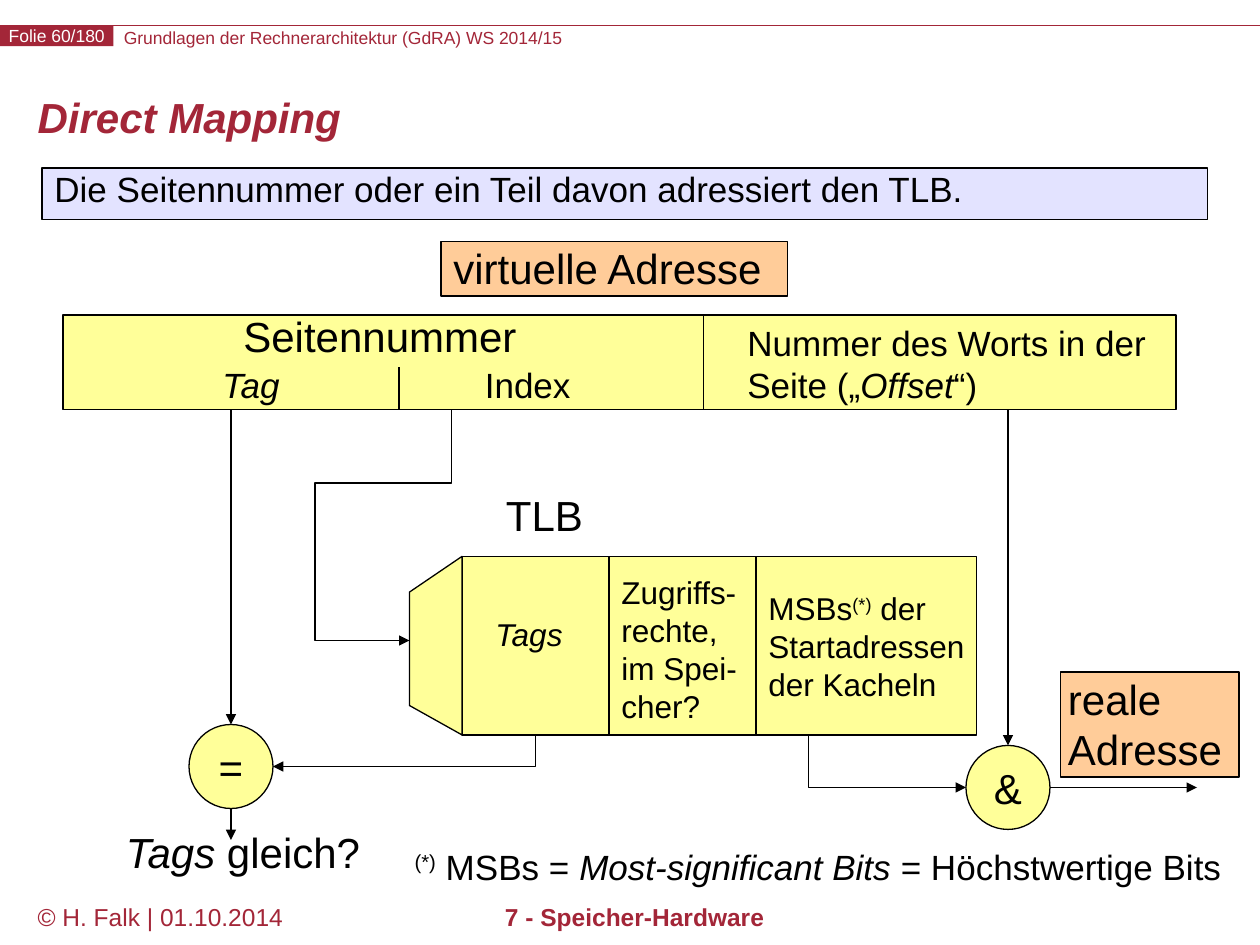
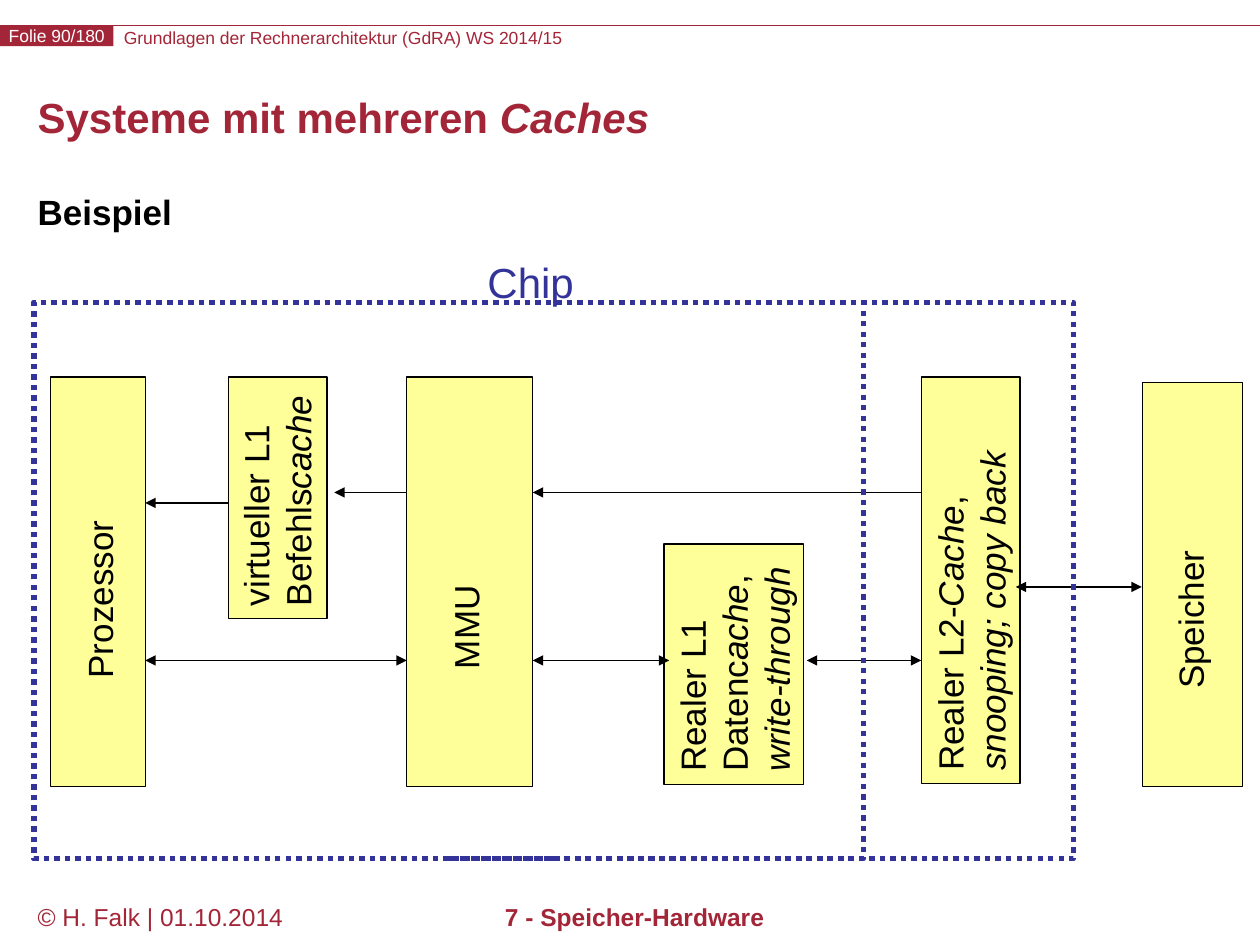
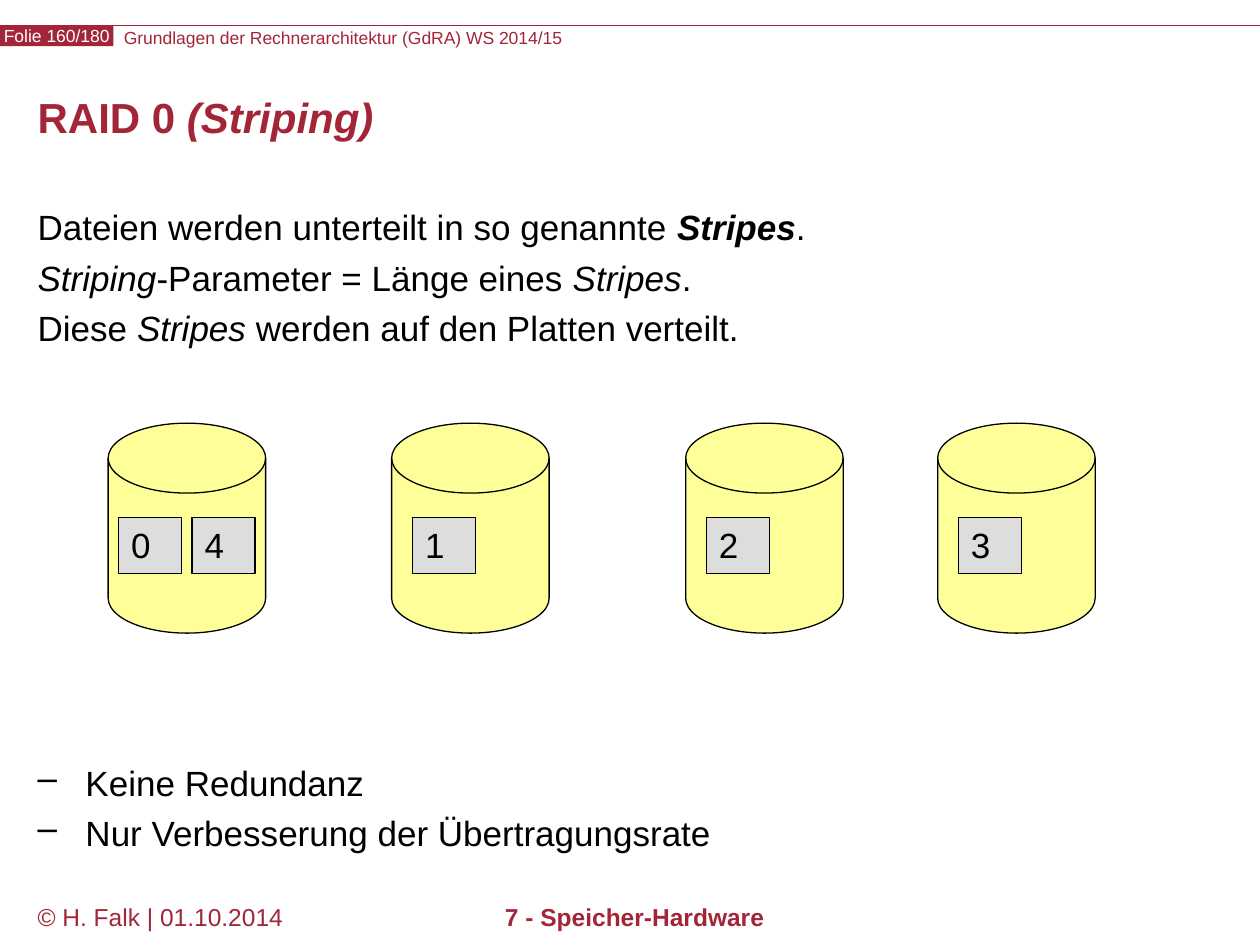
from dataclasses import dataclass

from lxml import etree
from pptx import Presentation
from pptx import util as u
from pptx.dml.color import RGBColor
from pptx.enum import dml, shapes, text
from pptx.oxml.ns import qn

COLUMNS, ROWS = 120, 90
WIDTH, HEIGHT = u.Inches(10), u.Inches(7.5)
COLORS = {
    "brand": "A32638",
    "ink": "000000",
    "paper": "FFFFFF",
    "part": "FFFF99",
    "address": "FFCC99",
    "statement": "E3E3FF",
    "block": "DDDDDD",
    "chip": "333399",
}
KINDS = shapes.MSO_SHAPE
CENTER = text.PP_ALIGN.CENTER
MIDDLE = text.MSO_ANCHOR.MIDDLE


@dataclass
class Box:
    x: float
    y: float
    w: float
    h: float

    def sub(self, x, y, w, h):
        return Box(self.x + x, self.y + y, w, h)

    def point(self, x, y):
        return (round((self.x + x) * WIDTH / COLUMNS),
                round((self.y + y) * HEIGHT / ROWS))

    def turned(self):
        shift = (self.w - self.h) / 2
        return Box(self.x + shift, self.y - shift, self.h, self.w)

    def emu(self):
        return (*self.point(0, 0), round(self.w * WIDTH / COLUMNS),
                round(self.h * HEIGHT / ROWS))


CANVAS = Box(0, 0, COLUMNS, ROWS)


def color(name):
    return RGBColor.from_string(COLORS[name])


def write(shape, *paragraphs, size=20, ink="ink", bold=False, italic=False,
          align=None, anchor=text.MSO_ANCHOR.TOP, inset=(0.1, 0.05), wrap=True,
          spacing=None, bullet=None):
    frame = shape.text_frame
    frame.word_wrap = wrap
    frame.vertical_anchor = anchor
    frame.margin_left = frame.margin_right = u.Inches(inset[0])
    frame.margin_top = frame.margin_bottom = u.Inches(inset[1])
    for number, runs in enumerate(paragraphs):
        paragraph = frame.add_paragraph() if number else frame.paragraphs[0]
        if bullet:
            properties = paragraph._p.get_or_add_pPr()
            properties.set("marL", str(u.Inches(0.38)))
            properties.set("indent", str(u.Inches(-0.38)))
            etree.SubElement(properties, qn("a:buChar")).set("char", bullet)
        paragraph.alignment = align or text.PP_ALIGN.LEFT
        if spacing:
            paragraph.line_spacing = spacing
        for run in [runs] if isinstance(runs, str) else runs:
            words, style = (run, "") if isinstance(run, str) else run
            for index, line in enumerate(words.split("\n")):
                if index:
                    paragraph.add_line_break()
                piece = paragraph.add_run()
                piece.text = line
                font = piece.font
                font.name, font.size = "Arial", u.Pt(size)
                font.bold = bold or "b" in style
                font.italic = italic or "i" in style
                font.color.rgb = color(ink)
                if "^" in style:
                    font.element.set("baseline", "30000") if hasattr(
                        font, "element") else font._rPr.set("baseline", "30000")


def label(slide, box, *paragraphs, turn=False, **style):
    area = slide.shapes.add_textbox(*(box.turned() if turn else box).emu())
    if turn:
        area.rotation = 270
    write(area, *paragraphs, **style)


def paint(shape, fill=None, line="ink", weight=0.75):
    shape.shadow.inherit = False
    if fill:
        shape.fill.solid()
        shape.fill.fore_color.rgb = color(fill)
    else:
        shape.fill.background()
    if line:
        shape.line.color.rgb = color(line)
        shape.line.width = u.Pt(weight)
    else:
        shape.line.fill.background()


def block(slide, box, *paragraphs, kind=KINDS.RECTANGLE, fill="part", line="ink",
          weight=0.75, turn=False, **style):
    shape = slide.shapes.add_shape(kind, *(box.turned() if turn else box).emu())
    if turn:
        shape.rotation = 270
    paint(shape, fill, line, weight)
    if paragraphs:
        write(shape, *paragraphs, **style)
    return shape


def add_heads(shape, ends):
    outline = shape.element.spPr.find(qn("a:ln"))
    for end in ends:
        etree.SubElement(outline, qn(f"a:{end}End")).set("type", "triangle")


def connect(slide, box, start, finish, ends=(), ink="ink", target=None):
    connector = slide.shapes.add_connector(
        shapes.MSO_CONNECTOR.STRAIGHT, *box.point(*start), *box.point(*finish))
    if target is not None:
        connector.end_connect(target, 0)
    connector.line.color.rgb = color(ink)
    connector.line.width = u.Pt(0.75)
    add_heads(connector, ends)
    etree.SubElement(connector.element.spPr, qn("a:effectLst"))


def outline(slide, box, points, closed=False, fill=None, ends=()):
    corners = [box.point(*point) for point in points]
    builder = slide.shapes.build_freeform(*corners[0])
    builder.add_line_segments(corners[1:], close=closed)
    shape = builder.convert_to_shape()
    paint(shape, fill)
    add_heads(shape, ends)


def slide_frame(deck, number, *title):
    slide = deck.slides.add_slide(deck.slide_layouts[6])
    connect(slide, CANVAS, (0, 2.4), (COLUMNS, 2.4), ink="brand")
    label(slide, CANVAS.sub(11.8, 2.6, 79, 2),
          "Grundlagen der Rechnerarchitektur (GdRA) WS 2014/15",
          size=10, ink="brand", inset=(0, 0))
    block(slide, CANVAS.sub(0, 2.4, 10.8, 2), f"Folie {number}/180", fill="brand",
          line=None, size=10, ink="paper", align=CENTER, inset=(0, 0), wrap=False)
    label(slide, CANVAS.sub(2.4, 85.3, 26.4, 4.7), "© H. Falk | 01.10.2014",
          size=14, ink="brand")
    label(slide, CANVAS.sub(24.1, 85.3, 72.7, 4.7), "7 - Speicher-Hardware",
          size=14, ink="brand", bold=True, align=CENTER)
    label(slide, CANVAS.sub(2.4, 7.2, 115.3, 8.6), title, size=24, ink="brand",
          bold=True, anchor=MIDDLE, spacing=u.Pt(24))
    return slide


def virtual_address(slide, box):
    block(slide, box)
    label(slide, box.sub(16, -1, 31, 6), "Seitennummer", size=24)
    label(slide, box.sub(64, 0, 41, 9),
          ["Nummer des Worts in der Seite („", ("Offset", "i"), "“)"])
    label(slide, box.sub(14, 4, 10, 5), "Tag", italic=True)
    label(slide, box.sub(39, 4, 19, 5), "Index")
    for column, top in ((61, 0), (32, 5)):
        connect(slide, box, (column, top), (column, box.h))
    block(slide, box.sub(47 - 11, -7, 33, 5.2), "virtuelle Adresse",
          fill="address", size=24, inset=(0.1, 0.01))


def tlb(slide, box):
    block(slide, box.sub(5, 0, box.w - 5, box.h))
    outline(slide, box, [(5, 0), (0, 3.4), (0, 14.2), (5, box.h)],
            closed=True, fill="part")
    for column in (19, 33):
        connect(slide, box, (column, 0), (column, box.h))
    label(slide, box.sub(8, -7, 27, 6), "TLB", size=24)
    label(slide, box.sub(7, 5, 10, 5), "Tags", size=18, italic=True)
    label(slide, box.sub(19, 1, 16, 16), "Zugriffs-rechte,\nim Spei-cher?", size=18)
    label(slide, box.sub(33, 2.5, 22, 12),
          ["MSBs", ("(*)", "^"), " der Startadressen der Kacheln"], size=18)


def address_paths(slide, box):
    for sign, column, row in (("=", 18, 69), ("&", 92, 71)):
        gate = block(slide, box.sub(column, row, 8, 8), sign, kind=KINDS.OVAL,
                     size=24, align=CENTER, anchor=MIDDLE, inset=(0, 0))
        connect(slide, box, (column + 4, 39), (column + 4, row), ["tail"], target=gate)
    connect(slide, box, (22, 77), (22, 80), ["tail"])
    connect(slide, box, (100, 75), (114, 75), ["tail"])
    for route in ([(43, 39), (43, 46), (30, 46), (30, 61), (39, 61)],
                  [(51, 70), (51, 73), (26, 73)],
                  [(77, 70), (77, 75), (92, 75)]):
        outline(slide, box, route, ends=["tail"])
    block(slide, box.sub(101, 64, 17, 10), "reale Adresse", fill="address",
          size=24, inset=(0.06, 0.01))
    label(slide, box.sub(10.8, 78.1, 27, 6), [("Tags", "i"), " gleich?"], size=24)
    label(slide, box.sub(38.3, 79.9, 81.2, 5.3),
          [("(*)", "^"), " MSBs = ", ("Most-significant Bits", "i"),
           " = Höchstwertige Bits"])


def direct_mapping(deck):
    slide = slide_frame(deck, 60, ("Direct Mapping", "i"))
    block(slide, CANVAS.sub(4, 16, 111, 4.9),
          "Die Seitennummer oder ein Teil davon adressiert den TLB.",
          fill="statement", spacing=u.Pt(20))
    virtual_address(slide, CANVAS.sub(6, 30, 106, 9))
    tlb(slide, CANVAS.sub(39, 53, 54, 17))
    address_paths(slide, CANVAS)


def chip(slide, box):
    top = 7.1
    for unit, column, row, width, height, label_column, label_row in (
            ("Prozessor", 1.6, top, 9, 39, 3.6, 17),
            ("MMU", 35.5, top, 12, 39, 38.5, 16.1),
            ("Speicher", 105.6, 7.6, 9.5, 38.5, 107.5, 18)):
        block(slide, box.sub(column, row, width, height))
        label(slide, box.sub(label_column, label_row, 5.2, 20), unit, turn=True)

    block(slide, box.sub(18.5, top, 9.4, 23),
          ["virtueller L1 Befehls", ("cache", "i")], turn=True)
    block(slide, box.sub(60, 23, 13.3, 22.9),
          ["Realer L1 Datenc", ("ache", "i"), ", ", ("write-through", "i")],
          turn=True, anchor=MIDDLE)
    block(slide, box.sub(84.5, top, 9.4, 38.7),
          ["Realer L2-", ("Cache", "i"), ", ", ("snooping; copy back", "i")],
          turn=True, anchor=MIDDLE)

    one_way, both_ways = ["tail"], ["head", "tail"]
    for row, start, finish, ends in (
            (19.1, 18.5, 10.6, one_way),
            (18.1, 84.5, 47.5, one_way),
            (18.1, 35.5, 28.6, one_way),
            (27.1, 105.5, 93.5, both_ways),
            (34.1, 84.5, 73.6, both_ways),
            (34.1, 60.5, 47.5, both_ways),
            (34.1, 35.5, 10.6, both_ways)):
        connect(slide, box, (start, row), (finish, row), ends)

    label(slide, box.sub(42, -5, 27, 6), "Chip", size=24, ink="chip")
    for width in (79, box.w):
        border = block(slide, box.sub(0, 0, width, box.h), fill=None,
                       line="chip", weight=3)
        border.line.dash_style = dml.MSO_LINE.ROUND_DOT


def several_caches(deck):
    slide = slide_frame(deck, 90, "Systeme mit mehreren ", ("Caches", "i"))
    label(slide, CANVAS.sub(2.4, 18.2, 115.3, 5), "Beispiel", bold=True,
          spacing=u.Pt(20))
    chip(slide, CANVAS.sub(3.24, 28.8, 99, 53))


def disk(slide, box, stripes, indent):
    block(slide, box, kind=KINDS.FLOWCHART_MAGNETIC_DISK)
    for index, stripe in enumerate(stripes):
        block(slide, box.sub(indent + 7 * index, 9, 6, 5.3), stripe, fill="block")


def raid_striping(deck):
    slide = slide_frame(deck, 160, "RAID 0 ", ("(Striping)", "i"))
    label(slide, CANVAS.sub(2.4, 18.2, 115.3, 15),
          ["Dateien werden unterteilt in so genannte ", ("Stripes", "bi"), "."],
          [("Striping", "i"), "-Parameter = Länge eines ", ("Stripes", "i"), "."],
          ["Diese ", ("Stripes", "i"), " werden auf den Platten verteilt."],
          spacing=1.2)
    for column, stripes, indent in ((10.3, "04", 1), (37.3, "1", 2),
                                    (65.3, "2", 2), (89.3, "3", 2)):
        disk(slide, CANVAS.sub(column, 40.3, 15, 20), stripes, indent)
    label(slide, CANVAS.sub(2.4, 71.1, 115.3, 11), "Keine Redundanz",
          "Nur Verbesserung der Übertragungsrate", spacing=1.2, bullet="–")


def main():
    deck = Presentation()
    deck.slide_width, deck.slide_height = WIDTH, HEIGHT
    direct_mapping(deck)
    several_caches(deck)
    raid_striping(deck)
    deck.save("out.pptx")


if __name__ == "__main__":
    main()
